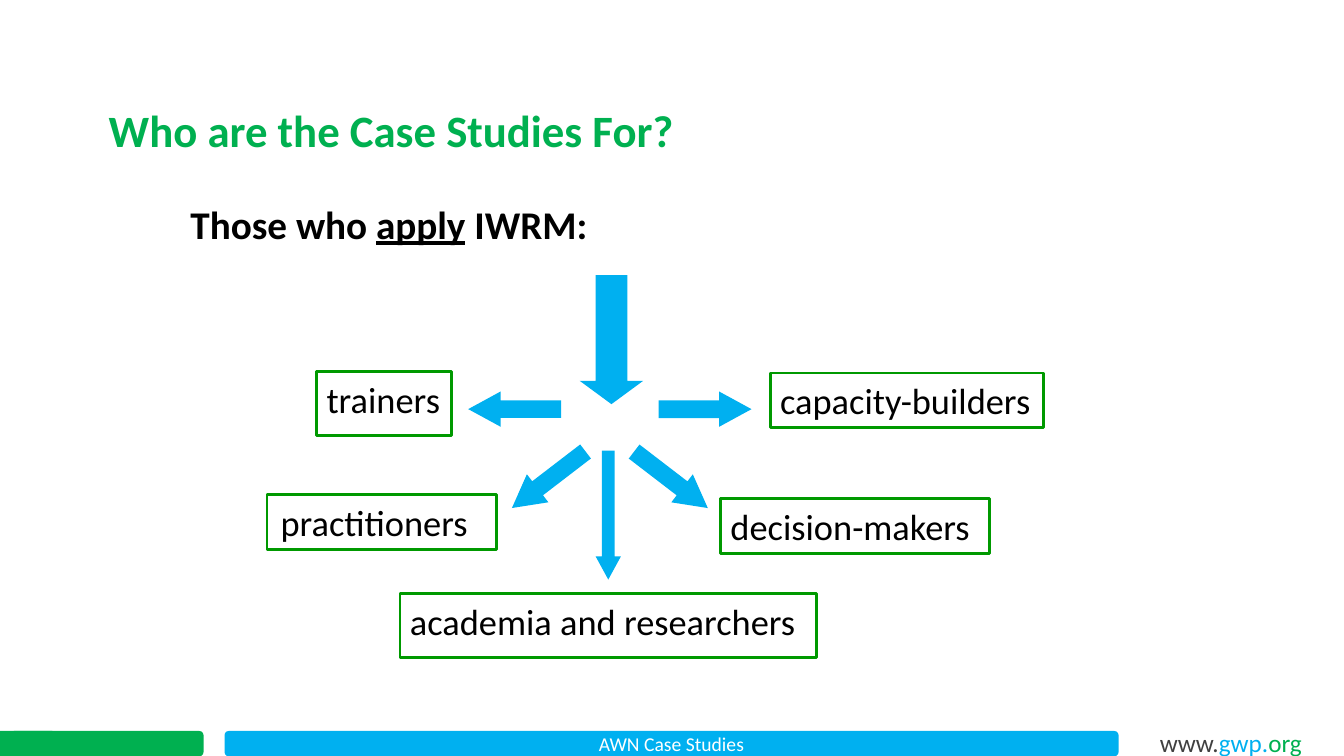
import pptx
import pptx.dml.color
import pptx.enum.shapes
import pptx.enum.text
import pptx.util

Cm = pptx.util.Cm
SHAPES = pptx.enum.shapes.MSO_SHAPE
ANCHOR = pptx.enum.text.MSO_ANCHOR
ALIGN = pptx.enum.text.PP_ALIGN

GREEN, BLUE, BORDER = "00B050", "00B0F0", "009900"
BLACK, WHITE, GREY = "000000", "FFFFFF", "404040"

# Positions and sizes in centimetres: left, top, width, height
TITLE = "Who are the Case Studies For?"
TITLE_AREA = (2.49, 2.57, 15.62, 1.55)
INTRO = [("Those who ", {}), ("apply", {"underline": True}), (" IWRM:", {})]
INTRO_AREA = (4.55, 5.05, 25.88, 13.44)
FOOTER = "AWN Case Studies"
FOOTER_TOP, FOOTER_HEIGHT = 18.42, 0.64
ADDRESS = [("www.", {}), ("gwp.", {"color": BLUE}), ("org", {"color": GREEN})]
ADDRESS_AREA = (28.98, 18.08, 4.17, 0.97)

# Text, area, left inset
AUDIENCES = [
    ("trainers", (7.98, 9.37, 3.4, 1.6), 0.25),
    ("practitioners", (6.73, 12.47, 5.79, 1.37), 0.34),
    ("decision-makers", (18.16, 12.57, 6.78, 1.37), 0.25),
    ("capacity-builders", (19.41, 9.4, 6.88, 1.37), 0.25),
    ("academia and researchers", (10.08, 14.96, 10.49, 1.6), 0.25),
]

# Centre x, centre y, width, length, head length, rotation
SIDE_WIDTH, SIDE_LENGTH, SIDE_HEAD = 0.89, 2.34, 0.917
AXIS = 15.37
ARROWS = [(15.41, 8.56, 1.6, 3.25, 0.367, 0), (15.33, 12.98, 0.64, 3.25, 0.917, 0)]
for offset, center_y, angle in [(2.4, 10.31, 90), (1.54, 12.09, 52.5)]:
    for side in (-1, 1):
        ARROWS.append((AXIS + side * offset, center_y, SIDE_WIDTH, SIDE_LENGTH,
                       SIDE_HEAD, -side * angle % 360))


def rgb(value):
    return pptx.dml.color.RGBColor.from_string(value)


def add_block(kind, area, fill=None, line=None):
    """Add a shadowless preset shape with an optional fill and outline."""
    shape = slide.shapes.add_shape(kind, *map(Cm, area))
    shape.shadow.inherit = False
    if fill:
        shape.fill.solid()
        shape.fill.fore_color.rgb = rgb(fill)
    else:
        shape.fill.background()
    if line:
        shape.line.color.rgb = rgb(line)
        shape.line.width = pptx.util.Pt(2)
    else:
        shape.line.fill.background()
    return shape


def write(shape, content, size, color=BLACK, bold=False, align=ALIGN.LEFT,
          anchor=ANCHOR.TOP, spacing=1.0, left_inset=0.25, right_inset=0.25):
    """Write a string, or a list of (text, overrides) runs, into a shape."""
    frame = shape.text_frame
    frame.word_wrap = True
    frame.vertical_anchor = anchor
    frame.margin_left, frame.margin_right = Cm(left_inset), Cm(right_inset)
    paragraph = frame.paragraphs[0]
    paragraph.alignment = align
    paragraph.line_spacing = spacing
    runs = [(content, {})] if isinstance(content, str) else content
    for text, overrides in runs:
        run = paragraph.add_run()
        run.text = text
        run.font.name = "Calibri"
        run.font.size = pptx.util.Pt(size)
        run.font.bold = bold
        run.font.underline = overrides.get("underline", False)
        run.font.color.rgb = rgb(overrides.get("color", color))


presentation = pptx.Presentation()
presentation.slide_width, presentation.slide_height = Cm(33.87), Cm(19.05)
slide = presentation.slides.add_slide(presentation.slide_layouts[6])

add_block(SHAPES.ROUNDED_RECTANGLE, (0.25, FOOTER_TOP, 4.88, FOOTER_HEIGHT), GREEN)
footer = add_block(SHAPES.ROUNDED_RECTANGLE, (5.66, FOOTER_TOP, 22.53, FOOTER_HEIGHT), BLUE)
write(footer, FOOTER, 14, WHITE, align=ALIGN.CENTER, anchor=ANCHOR.MIDDLE)
address = add_block(SHAPES.RECTANGLE, ADDRESS_AREA, WHITE)
write(address, ADDRESS, 18, GREY, spacing=1.15)
add_block(SHAPES.RECTANGLE, (0, FOOTER_TOP, 1.32, FOOTER_HEIGHT), GREEN)

title = slide.shapes.add_textbox(*map(Cm, TITLE_AREA))
write(title, TITLE, 32, GREEN, bold=True, anchor=ANCHOR.MIDDLE, spacing=0.9)
intro = slide.shapes.add_textbox(*map(Cm, INTRO_AREA))
write(intro, INTRO, 28, bold=True, spacing=0.9)

for text, area, inset in AUDIENCES:
    box = add_block(SHAPES.RECTANGLE, area, line=BORDER)
    write(box, text, 26, left_inset=inset, right_inset=0.1)

for center_x, center_y, width, length, head, rotation in ARROWS:
    arrow = add_block(SHAPES.DOWN_ARROW,
                      (center_x - width / 2, center_y - length / 2, width, length), BLUE)
    arrow.adjustments[0] = 0.5
    arrow.adjustments[1] = head
    arrow.rotation = rotation

presentation.save("out.pptx")
